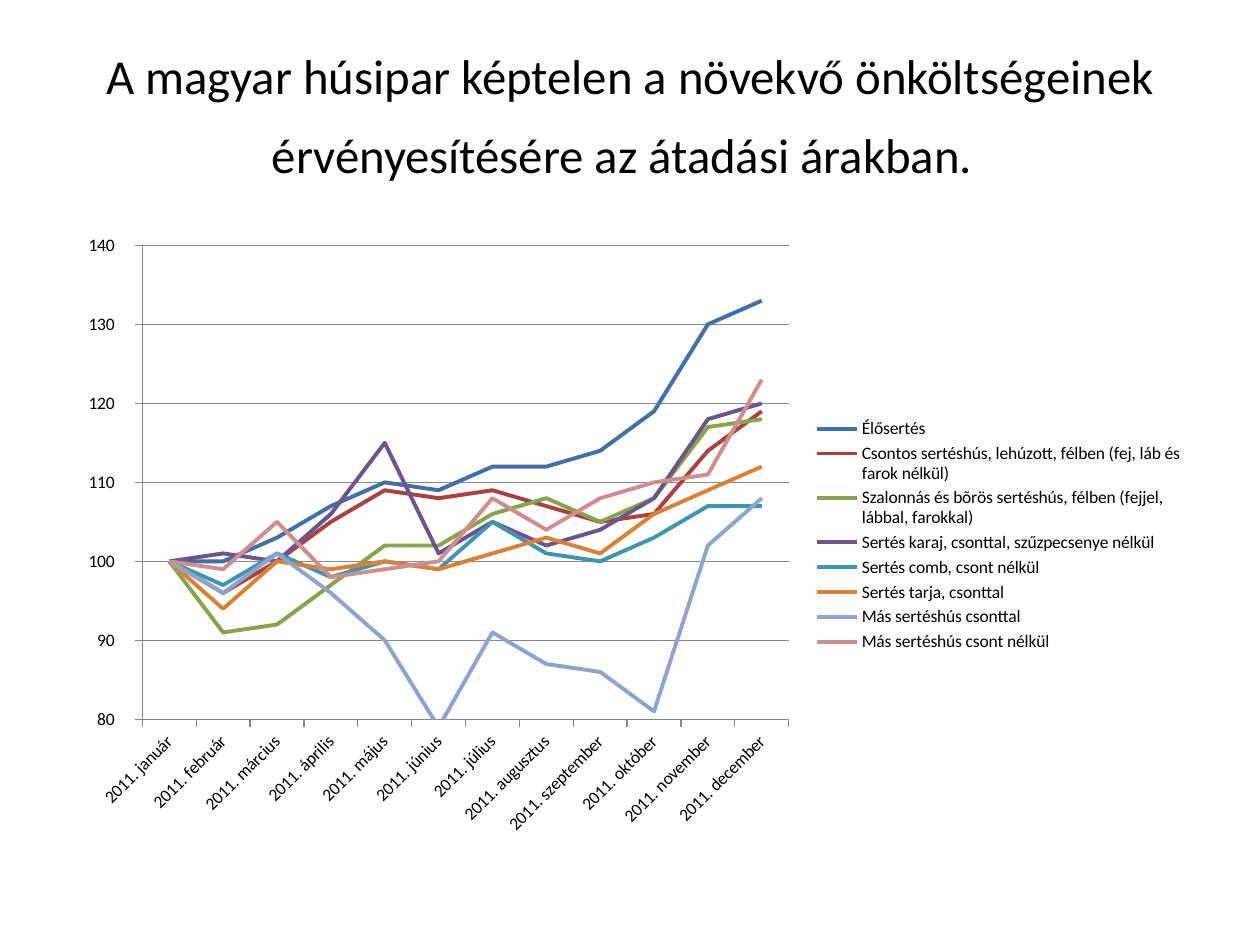
from lxml import etree
from pptx import Presentation
from pptx.chart.data import CategoryChartData
from pptx.dml.color import RGBColor
from pptx.enum.chart import XL_CHART_TYPE, XL_LEGEND_POSITION, XL_MARKER_STYLE, XL_TICK_MARK
from pptx.enum.text import MSO_ANCHOR, PP_ALIGN
from pptx.oxml.ns import qn
from pptx.util import Inches, Pt

LINE_CHART = XL_CHART_TYPE.LINE
LEGEND_RIGHT = XL_LEGEND_POSITION.RIGHT
NO_MARKER = XL_MARKER_STYLE.NONE
TICK_OUTSIDE = XL_TICK_MARK.OUTSIDE
MIDDLE = MSO_ANCHOR.MIDDLE
CENTER = PP_ALIGN.CENTER

FONT = "Calibri"
BLACK = RGBColor(0x00, 0x00, 0x00)
GRAY = RGBColor(0x86, 0x86, 0x86)
BLUE = RGBColor(0x41, 0x6F, 0xA6)
RED = RGBColor(0xA8, 0x42, 0x3F)
GREEN = RGBColor(0x86, 0xA4, 0x4A)
PURPLE = RGBColor(0x6E, 0x54, 0x8D)
TEAL = RGBColor(0x3D, 0x96, 0xAE)
ORANGE = RGBColor(0xDA, 0x81, 0x37)
LIGHT_BLUE = RGBColor(0x8E, 0xA5, 0xCB)
PINK = RGBColor(0xCE, 0x8E, 0x8D)

MONTHS = ["január", "február", "március", "április", "május", "június", "július",
          "augusztus", "szeptember", "október", "november", "december"]
PRICE_INDEXES = [
    ("Élősertés", BLUE,
     (100, 100, 103, 107, 110, 109, 112, 112, 114, 119, 130, 133)),
    ("Csontos sertéshús, lehúzott, félben (fej, láb és farok nélkül)", RED,
     (100, 96, 100, 105, 109, 108, 109, 107, 105, 106, 114, 119)),
    ("Szalonnás és bõrös sertéshús, félben (fejjel, lábbal, farokkal)", GREEN,
     (100, 91, 92, 97, 102, 102, 106, 108, 105, 108, 117, 118)),
    ("Sertés karaj, csonttal, szűzpecsenye nélkül", PURPLE,
     (100, 101, 100, 106, 115, 101, 105, 102, 104, 108, 118, 120)),
    ("Sertés comb, csont nélkül", TEAL,
     (100, 97, 101, 98, 100, 99, 105, 101, 100, 103, 107, 107)),
    ("Sertés tarja, csonttal", ORANGE,
     (100, 94, 100, 99, 100, 99, 101, 103, 101, 106, 109, 112)),
    ("Más sertéshús csonttal", LIGHT_BLUE,
     (100, 96, 101, 96, 90, 79, 91, 87, 86, 81, 102, 108)),
    ("Más sertéshús csont nélkül", PINK,
     (100, 99, 105, 98, 99, 100, 108, 104, 108, 110, 111, 123)),
]


def place_in_chart(element, index, modes, shares):
    """Fix a chart part's left, top, width and height as shares of the chart."""
    for old_layout in element.findall(qn("c:layout")):
        element.remove(old_layout)
    layout = etree.Element(qn("c:layout"))
    manual = etree.SubElement(layout, qn("c:manualLayout"))
    for tag, value in modes + list(zip("xywh", shares)):
        etree.SubElement(manual, qn(f"c:{tag}")).set("val", str(value))
    element.insert(index, layout)


presentation = Presentation()
presentation.slide_width = Inches(10)
presentation.slide_height = Inches(7.5)
slide = presentation.slides.add_slide(presentation.slide_layouts[6])
margin = int(presentation.slide_width * 0.05)
content_width = presentation.slide_width - 2 * margin

# Title; the larger closing space sets the height of the second line
title = slide.shapes.add_textbox(
    margin, int(presentation.slide_height * 0.04),
    content_width, Inches(1.25))
text_frame = title.text_frame
text_frame.word_wrap = True
text_frame.vertical_anchor = MIDDLE
paragraph = text_frame.paragraphs[0]
paragraph.alignment = CENTER
for text, size in [
    ("A magyar húsipar képtelen a növekvő önköltségeinek "
     "érvényesítésére az átadási árakban.", 27.9),
    (" ", 39.6),
]:
    run = paragraph.add_run()
    run.text = text
    run.font.name = FONT
    run.font.size = Pt(size)
    run.font.color.rgb = BLACK

# Price index chart
chart_data = CategoryChartData()
chart_data.categories = [f"2011. {month}" for month in MONTHS]
for name, color, values in PRICE_INDEXES:
    chart_data.add_series(name, values)
chart = slide.shapes.add_chart(
    LINE_CHART, margin, Inches(1.75), content_width,
    int(presentation.slide_height * 0.66), chart_data).chart
chart.has_title = False
chart.font.name = FONT
chart.font.size = Pt(10)
chart.font.color.rgb = BLACK
chart.plots[0].vary_by_categories = False

for series, (name, color, values) in zip(chart.plots[0].series, PRICE_INDEXES):
    series.smooth = False
    series.marker.style = NO_MARKER
    series.format.line.color.rgb = color
    series.format.line.width = Pt(2.25)

value_axis = chart.value_axis
value_axis.minimum_scale = 80
value_axis.maximum_scale = 140
value_axis.major_unit = 10
value_axis.has_major_gridlines = True
value_axis.tick_labels.number_format = r"#,##0\ _F_t"
value_axis.tick_labels.number_format_is_linked = False
category_axis = chart.category_axis
category_axis.tick_labels.font.size = Pt(10)
category_axis.tick_labels.font.color.rgb = BLACK
category_axis.tick_labels.font.name = FONT
category_axis.format.line.width = Pt(0.75)
label_body = category_axis.tick_labels.font._element.getparent().getparent().getparent().find(qn("a:bodyPr"))
label_body.set("rot", "-2700000")
label_body.set("vert", "horz")
for axis in (value_axis, category_axis):
    axis.major_tick_mark = TICK_OUTSIDE
for axis_line in (value_axis.format.line, category_axis.format.line,
                  value_axis.major_gridlines.format.line):
    axis_line.color.rgb = GRAY
    axis_line.width = Pt(0.75)

chart.has_legend = True
legend = chart.legend
legend.position = LEGEND_RIGHT
legend.include_in_layout = False
legend.font.size = Pt(10)
legend.font.name = FONT
legend.font.color.rgb = BLACK

edge_modes = [("xMode", "edge"), ("yMode", "edge")]
plot_area = chart._chartSpace.find(f".//{qn('c:plotArea')}")
place_in_chart(plot_area, 0, [("layoutTarget", "inner")] + edge_modes,
               (0.07, 0.04, 0.57, 0.76))
place_in_chart(legend._element, 1, edge_modes, (0.66, 0.31, 0.33, 0.39))

presentation.save("out.pptx")
